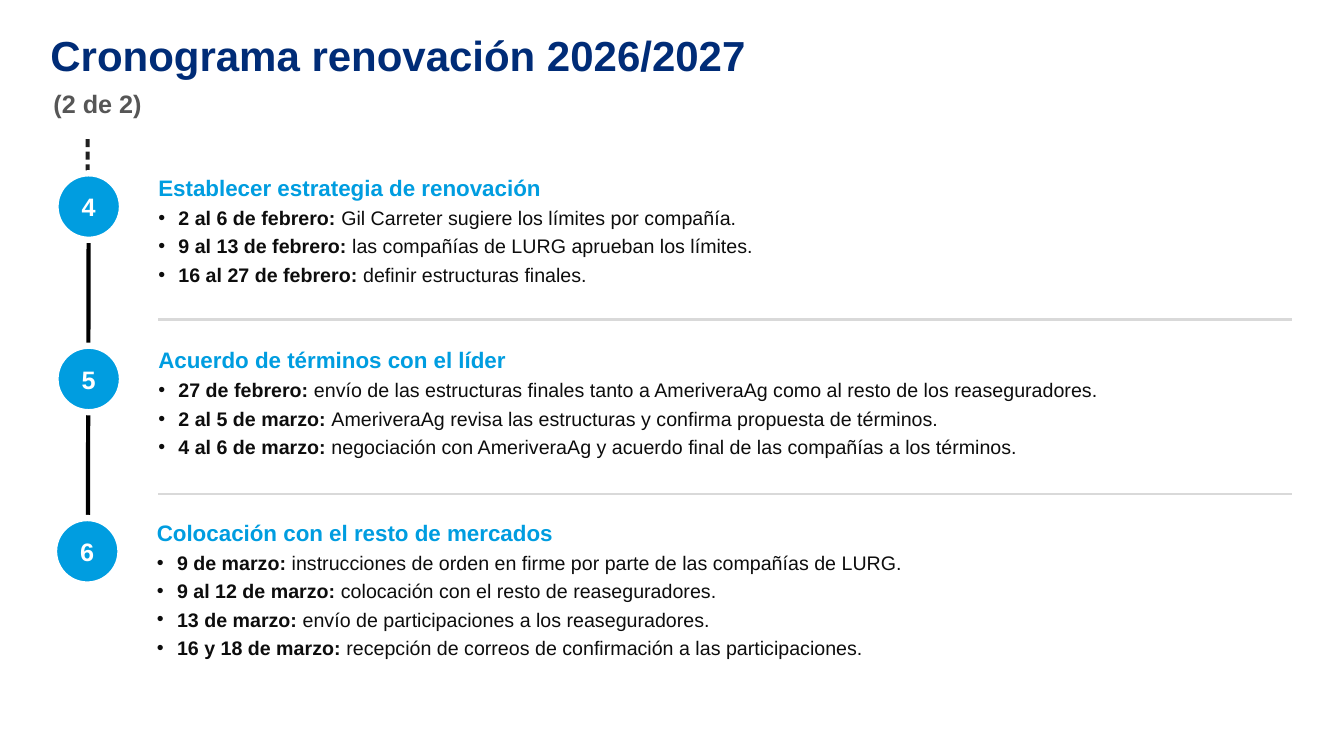
from lxml.etree import SubElement
from pptx import Presentation
from pptx.dml.color import RGBColor
from pptx.enum.shapes import MSO_CONNECTOR as Connector, MSO_SHAPE as Shape
from pptx.enum.text import MSO_ANCHOR as Anchor, PP_ALIGN as Align
from pptx.oxml.ns import qn
from pptx.util import Inches, Pt

NAVY, BLUE, GRAY, INK = "002C77", "009DE0", "565656", "0D0D0D"
WHITE, BLACK, RULE, DASH = "FFFFFF", "000000", "D9D9D9", "202020"

STAGES = [
    ("4", "Establecer estrategia de renovación", [
        ("2 al 6 de febrero: ", "Gil Carreter sugiere los límites por compañía."),
        ("9 al 13 de febrero: ", "las compañías de LURG aprueban los límites."),
        ("16 al 27 de febrero: ", "definir estructuras finales."),
    ]),
    ("5", "Acuerdo de términos con el líder", [
        ("27 de febrero: ", "envío de las estructuras finales tanto a AmeriveraAg "
                            "como al resto de los reaseguradores."),
        ("2 al 5 de marzo: ", "AmeriveraAg revisa las estructuras y confirma "
                              "propuesta de términos."),
        ("4 al 6 de marzo: ", "negociación con AmeriveraAg y acuerdo final de las "
                              "compañías a los términos."),
    ]),
    ("6", "Colocación con el resto de mercados", [
        ("9 de marzo: ", "instrucciones de orden en firme por parte de las "
                         "compañías de LURG."),
        ("9 al 12 de marzo: ", "colocación con el resto de reaseguradores."),
        ("13 de marzo: ", "envío de participaciones a los reaseguradores."),
        ("16 y 18 de marzo: ", "recepción de correos de confirmación a las "
                               "participaciones."),
    ]),
]


def color(hex_string):
    return RGBColor.from_string(hex_string)


def add_text(paragraph, text, size=14, fill=INK, bold=True):
    run = paragraph.add_run()
    run.text = text
    run.font.name = "Arial"
    run.font.size = Pt(size)
    run.font.bold = bold
    run.font.color.rgb = color(fill)


def add_bullet(paragraph):
    properties = paragraph._p.get_or_add_pPr()
    indent = Inches(0.2)
    properties.set("marL", str(indent))
    properties.set("indent", str(-indent))
    SubElement(properties, qn("a:buFont")).set("typeface", "Arial")
    SubElement(properties, qn("a:buChar")).set("char", "•")


class Timeline:
    """Draws on one slide; every length is a percentage of the slide's size."""

    def __init__(self, presentation):
        self.width = presentation.slide_width
        self.height = presentation.slide_height
        self.slide = presentation.slides.add_slide(presentation.slide_layouts[5])

    def place(self, x, y):
        return round(self.width * x / 100), round(self.height * y / 100)

    def box(self, x, y, width, height):
        return *self.place(x, y), *self.place(width, height)

    def frame(self, shape, anchor=Anchor.TOP, wrap=True):
        frame = shape.text_frame
        frame.margin_left = frame.margin_right = 0
        frame.margin_top = frame.margin_bottom = 0
        frame.vertical_anchor = anchor
        frame.word_wrap = wrap
        return frame

    def title(self, text, *box):
        shape = self.slide.shapes.title
        shape.left, shape.top, shape.width, shape.height = self.box(*box)
        paragraph = self.frame(shape).paragraphs[0]
        paragraph.alignment = Align.LEFT
        paragraph.line_spacing = 0.8
        add_text(paragraph, text, size=30, fill=NAVY)

    def text(self, text, *box, **style):
        shape = self.slide.shapes.add_textbox(*self.box(*box))
        frame = self.frame(shape)
        add_text(frame.paragraphs[0], text, **style)
        return frame

    def stage(self, heading, steps, *box):
        frame = self.text(heading, *box, size=16, fill=BLUE)
        for date, task in steps:
            paragraph = frame.add_paragraph()
            paragraph.space_before = Pt(3.5)
            add_bullet(paragraph)
            add_text(paragraph, date)
            add_text(paragraph, task, bold=False)

    def shape(self, kind, fill, *box):
        shape = self.slide.shapes.add_shape(kind, *self.box(*box))
        shape.shadow.inherit = False
        shape.fill.solid()
        shape.fill.fore_color.rgb = color(fill)
        shape.line.fill.background()
        return shape

    def badge(self, number, *box):
        shape = self.shape(Shape.OVAL, BLUE, *box)
        shape.line.color.rgb = color(WHITE)
        shape.line.width = Pt(4.5)
        paragraph = self.frame(shape, Anchor.MIDDLE, wrap=False).paragraphs[0]
        paragraph.alignment = Align.CENTER
        add_text(paragraph, number, size=18, fill=WHITE)

    def line(self, start, end, stroke, width, head=None, tail=None):
        line = self.slide.shapes.add_connector(
            Connector.STRAIGHT, *self.place(*start), *self.place(*end))
        line.line.color.rgb = color(stroke)
        line.line.width = Pt(width)
        outline = line.line._get_or_add_ln()
        for tag, kind in (("a:headEnd", head), ("a:tailEnd", tail)):
            if kind:
                SubElement(outline, qn(tag)).set("type", kind)
        SubElement(line._element.spPr, qn("a:effectLst"))


def main():
    presentation = Presentation()
    presentation.slide_width = Inches(13.33)
    presentation.slide_height = Inches(7.5)
    timeline = Timeline(presentation)

    # Heading
    timeline.title("Cronograma renovación 2026/2027", 3.75, 5.2, 92.35, 7.2)
    timeline.text("(2 de 2)", 3.98, 11.73, 92.05, 4.67, size=18, fill=GRAY)

    # Spine behind the badges, with dashes leading in from the previous slide
    timeline.line((6.6, 28.4), (6.53, 77.33), BLACK, 3, head="oval", tail="triangle")
    for index in range(3):
        timeline.shape(Shape.RECTANGLE, DASH, 6.38, 18.4 + 1.67 * index, 0.3, 1.07)

    # Stages at an equal pitch; the last one sits slightly further left
    for index, (number, heading, steps) in enumerate(STAGES):
        top = 22.93 + 22.8 * index
        shift = 0.11 if index == len(STAGES) - 1 else 0
        timeline.badge(number, 4.13 - shift, top, 4.95, 8.8)
        timeline.stage(heading, steps, 11.78 - shift, top + 0.1, 84.32, 18)

    # Dividers between stages
    for y in (42.27, 65.33):
        timeline.line((96.1, y), (11.78, y), RULE, 1.5)

    presentation.save("out.pptx")


if __name__ == "__main__":
    main()
